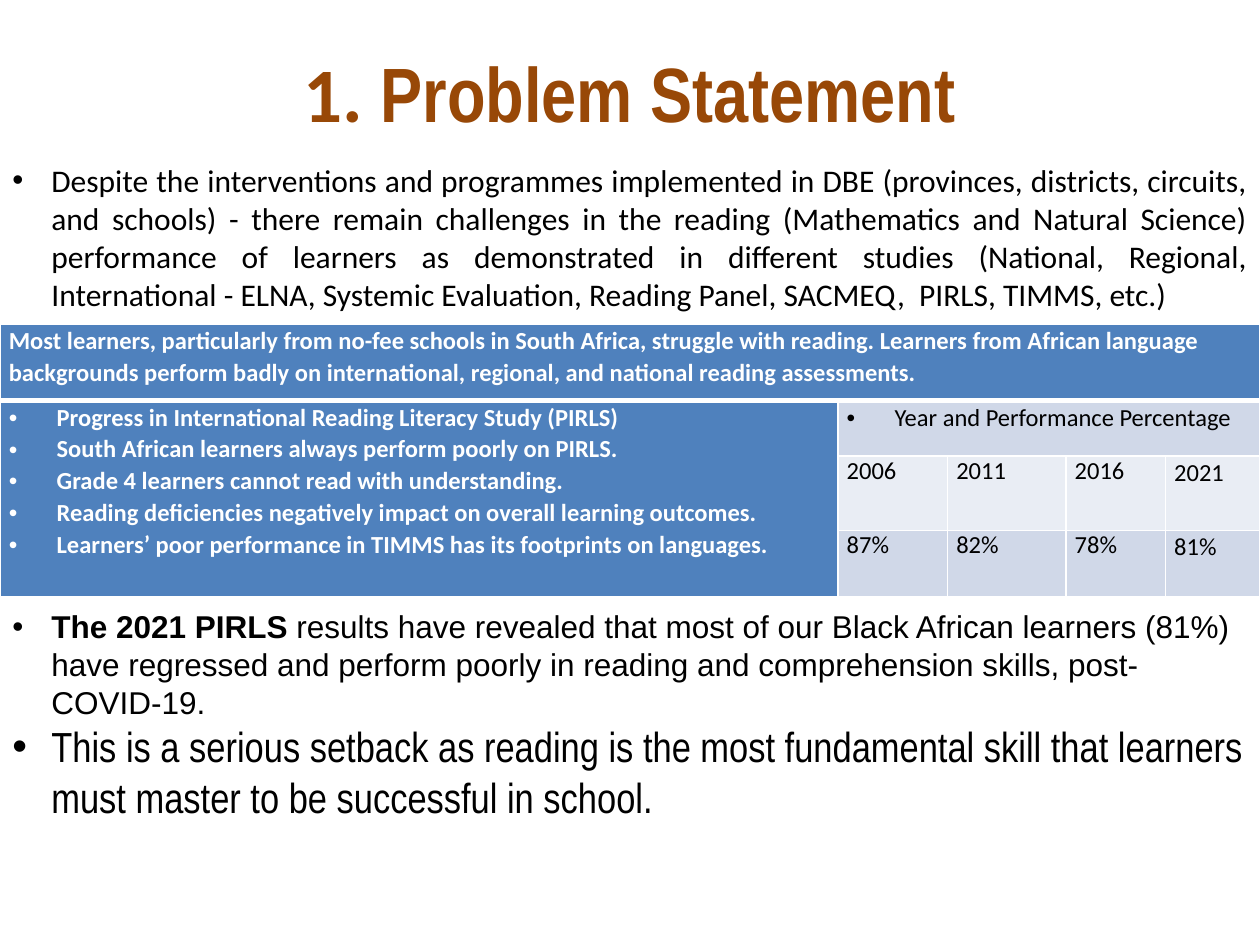
from lxml import etree
from pptx import Presentation
from pptx import util as u
from pptx.dml.color import RGBColor
from pptx.enum import text
from pptx.oxml import ns

GRID = u.Inches(0.1)
COLORS = {
    "title": "984807",
    "body": "000000",
    "white": "FFFFFF",
    "banner": "4F81BD",
    "band": "D0D8E8",
    "light": "E9EDF4",
}
COLUMNS = [66.5, 8.7, 9.4, 7.9, 7.5]
ROWS = [6.1, 4.4, 5.9, 5.3]
BANNER = (
    "Most learners, particularly from no-fee schools in South Africa, struggle with reading. "
    "Learners from African language backgrounds perform badly on international, regional, "
    "and national reading assessments."
)
FINDINGS = [
    "Progress in International Reading Literacy Study (PIRLS)",
    "South African learners always perform poorly on PIRLS.",
    "Grade 4 learners cannot read with understanding.",
    "Reading deficiencies negatively impact on overall learning outcomes.",
    "Learners’ poor performance in TIMMS has its footprints on languages.",
]
RESULTS = {"2006": "87%", "2011": "82%", "2016": "78%", "2021": "81%"}
CHALLENGES = (
    "Despite the interventions and programmes implemented in DBE (provinces, districts, "
    "circuits, and schools) - there remain challenges in the reading (Mathematics and Natural "
    "Science) performance of learners as demonstrated in different studies (National, Regional, "
    "International - ELNA, Systemic Evaluation, Reading Panel, SACMEQ,  PIRLS, TIMMS, etc.)"
)
REGRESSION = (
    "results have revealed that most of our Black African learners (81%) have regressed and "
    "perform poorly in reading and comprehension skills, post-COVID-19."
)
SETBACK = (
    "This is a serious setback as reading is the most fundamental skill that learners "
    "must master to be successful in school."
)


def span(units):
    return int(units * GRID)


def style(font, size=None, name=None, color=None, bold=None):
    if size:
        font.size = u.Pt(size)
    if name:
        font.name = name
    if color:
        font.color.rgb = RGBColor.from_string(COLORS[color])
    if bold is not None:
        font.bold = bold


def add_bullet(paragraph, indent):
    properties = paragraph._p.get_or_add_pPr()
    properties.set("marL", str(span(indent)))
    properties.set("indent", str(-span(indent)))
    etree.SubElement(properties, ns.qn("a:buFont"), typeface="Arial")
    etree.SubElement(properties, ns.qn("a:buChar"), char="•")


def next_paragraph(frame):
    first = frame.paragraphs[0]
    return frame.add_paragraph() if first.runs else first


def add_text_area(slide, left, top, width, height):
    area = slide.shapes.add_textbox(*map(span, (left, top, width, height)))
    area.text_frame.word_wrap = True
    return area.text_frame


def add_point(frame, wording, size, name, lead=None):
    point = next_paragraph(frame)
    add_bullet(point, 3.1)
    style(point.font, size, name, "body")
    if lead:
        opening = point.add_run()
        opening.text = lead
        opening.font.bold = True
    point.add_run().text = wording
    return point


def add_title(slide):
    frame = add_text_area(slide, 5, 3, 90, 8.6)
    frame.vertical_anchor = text.MSO_ANCHOR.MIDDLE
    heading = frame.paragraphs[0]
    heading.alignment = text.PP_ALIGN.CENTER
    style(heading.font, 44, color="title", bold=True)
    for wording, name in (("1. ", "Calibri"), ("Problem Statement", "Arial Narrow")):
        part = heading.add_run()
        part.text = wording
        part.font.name = name


def add_borders(cell, bottom):
    properties = cell._tc.get_or_add_tcPr()
    for place, (side, width) in enumerate((("L", 1), ("R", 1), ("T", 1), ("B", bottom))):
        line = etree.Element(ns.qn(f"a:ln{side}"), w=str(u.Pt(width)))
        fill = etree.SubElement(line, ns.qn("a:solidFill"))
        etree.SubElement(fill, ns.qn("a:srgbClr"), val=COLORS["white"])
        properties.insert(place, line)


def fill_cell(cell, lines, fill, color="body", bold=False, bullets=False, spacing=None):
    cell.fill.solid()
    cell.fill.fore_color.rgb = RGBColor.from_string(COLORS[fill])
    cell.margin_left = cell.margin_right = span(0.7)
    cell.margin_top = cell.margin_bottom = 0
    for wording in lines:
        entry = next_paragraph(cell.text_frame)
        if spacing:
            entry.line_spacing = spacing
        if bullets:
            add_bullet(entry, 3.8)
        style(entry.font, 14, "Calibri", color, bold)
        entry.add_run().text = wording


def add_results_table(slide):
    place = map(span, (0, 25.7, sum(COLUMNS), sum(ROWS)))
    table = slide.shapes.add_table(len(ROWS), len(COLUMNS), *place).table
    for column, width in zip(table.columns, COLUMNS):
        column.width = span(width)
    for row, height in zip(table.rows, ROWS):
        row.height = span(height)
    table.cell(0, 0).merge(table.cell(0, 4))
    table.cell(1, 0).merge(table.cell(3, 0))
    table.cell(1, 1).merge(table.cell(1, 4))
    fill_cell(table.cell(0, 0), [BANNER], "banner", "white", True, spacing=1.07)
    fill_cell(table.cell(1, 0), FINDINGS, "banner", "white", True, True, 1.07)
    fill_cell(table.cell(1, 1), ["Year and Performance Percentage"], "band",
              bullets=True, spacing=1.07)
    for column, (year, share) in enumerate(RESULTS.items(), 1):
        spacing = 1.07 if column == len(RESULTS) else None
        fill_cell(table.cell(2, column), [year], "light", spacing=spacing)
        fill_cell(table.cell(3, column), [share], "band", spacing=spacing)
    for index, row in enumerate(table.rows):
        for cell in row.cells:
            add_borders(cell, 3 if index == 0 else 1)


def main():
    deck = Presentation()
    deck.slide_width, deck.slide_height = span(100), span(75)
    slide = deck.slides.add_slide(deck.slide_layouts[6])
    add_title(slide)
    add_results_table(slide)
    challenges = add_text_area(slide, 0, 12.3, 100, 13.1)
    add_point(challenges, CHALLENGES, 18, "Calibri").alignment = text.PP_ALIGN.JUSTIFY
    conclusions = add_text_area(slide, 0, 47.7, 100, 18.2)
    add_point(conclusions, REGRESSION, 18, "Arial", lead="The 2021 PIRLS ")
    add_point(conclusions, SETBACK, 24, "Arial Narrow")
    deck.save("out.pptx")


if __name__ == "__main__":
    main()
